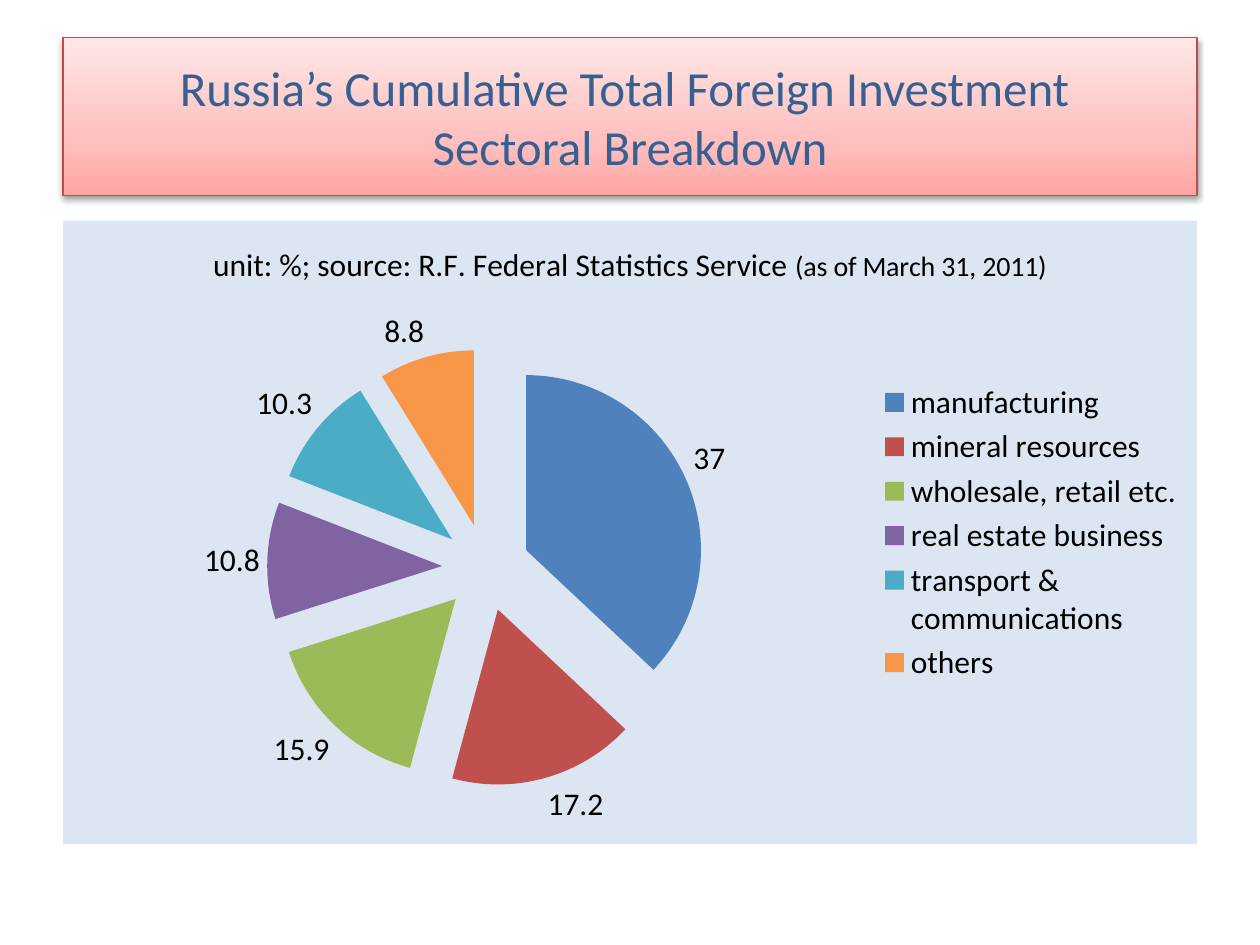
from dataclasses import dataclass

import pptx
import pptx.chart.data
import pptx.dml.color
import pptx.enum.chart
import pptx.enum.text
import pptx.oxml
import pptx.oxml.ns
import pptx.util
from pptx.util import Cm

FONT = "Calibri"
LEFT, WIDTH = Cm(1.27), Cm(22.86)


@dataclass(frozen=True)
class Sector:
    name: str
    percent: float
    color: str


SECTORS = [
    Sector("manufacturing", 37, "4F81BD"),
    Sector("mineral resources", 17.2, "C0504D"),
    Sector("wholesale, retail etc.", 15.9, "9BBB59"),
    Sector("real estate business", 10.8, "8064A2"),
    Sector("transport & communications", 10.3, "4BACC6"),
    Sector("others", 8.8, "F79646"),
]


def rgb(color: str) -> pptx.dml.color.RGBColor:
    return pptx.dml.color.RGBColor.from_string(color)


def set_font(font, size: float, color: str) -> None:
    font.name = FONT
    font.size = pptx.util.Pt(size)
    font.bold = False
    font.color.rgb = rgb(color)


def append_xml(parent, xml: str) -> None:
    namespace = pptx.oxml.ns.nsdecls("a")
    parent.append(pptx.oxml.parse_xml(xml.replace(">", f" {namespace}>", 1)))


def draw_heading(heading) -> None:
    heading.left, heading.top = LEFT, Cm(0.76)
    heading.width, heading.height = WIDTH, Cm(3.18)

    properties = heading._element.spPr
    stops = "".join(
        f'<a:gs pos="{percent * 1000}"><a:srgbClr val="{color}"/></a:gs>'
        for percent, color in [(0, "FFA6A5"), (35, "FFC0BF"), (100, "FFE7E7")]
    )
    append_xml(properties, f'<a:gradFill rotWithShape="1"><a:gsLst>{stops}</a:gsLst>'
                           '<a:lin ang="16200000" scaled="1"/></a:gradFill>')
    heading.line.color.rgb = rgb("BF4C48")
    heading.line.width = pptx.util.Pt(0.75)
    append_xml(properties, '<a:effectLst >'
                           '<a:outerShdw blurRad="40000" dist="20000" dir="5400000" rotWithShape="0">'
                           '<a:srgbClr val="000000"><a:alpha val="38000"/></a:srgbClr>'
                           '</a:outerShdw></a:effectLst>')

    frame = heading.text_frame
    frame.word_wrap = True
    frame.vertical_anchor = pptx.enum.text.MSO_ANCHOR.MIDDLE
    paragraph = frame.paragraphs[0]
    paragraph.alignment = pptx.enum.text.PP_ALIGN.CENTER
    paragraph.add_run().text = "Russia’s Cumulative Total Foreign Investment "
    paragraph.add_line_break()
    paragraph.add_run().text = "Sectoral Breakdown"
    set_font(paragraph.font, 28, "376092")


def draw_sector_pie(slide, sectors: list[Sector]) -> None:
    data = pptx.chart.data.CategoryChartData()
    data.categories = [sector.name for sector in sectors]
    data.add_series("Series 1", [sector.percent for sector in sectors])
    chart = slide.shapes.add_chart(
        pptx.enum.chart.XL_CHART_TYPE.PIE, LEFT, Cm(4.45), WIDTH, Cm(12.57), data
    ).chart
    set_font(chart.font, 18, "000000")
    fill_background(chart, "DCE6F2")

    caption = chart.chart_title.text_frame.paragraphs[0]
    for text, size in [("unit: %; source: R.F. Federal Statistics Service ", 18),
                       ("(as of March 31, 2011)", 16)]:
        run = caption.add_run()
        run.text = text
        set_font(run.font, size, "000000")

    chart.has_legend = True
    chart.legend.position = pptx.enum.chart.XL_LEGEND_POSITION.RIGHT
    chart.legend.include_in_layout = False
    set_font(chart.legend.font, 18, "000000")

    plot = chart.plots[0]
    plot.vary_by_categories = True
    series = plot.series[0]
    explode(series, 25)
    for index, sector in enumerate(sectors):
        fill = series.points[index].format.fill
        fill.solid()
        fill.fore_color.rgb = rgb(sector.color)

    labels = series.data_labels
    labels.show_value = True
    labels.position = pptx.enum.chart.XL_LABEL_POSITION.OUTSIDE_END
    set_font(labels.font, 18, "000000")


def fill_background(chart, color: str) -> None:
    chart_space = chart._chartSpace
    properties = pptx.oxml.parse_xml(
        f'<c:spPr {pptx.oxml.ns.nsdecls("c", "a")}>'
        f'<a:solidFill><a:srgbClr val="{color}"/></a:solidFill>'
        '<a:ln><a:noFill/></a:ln></c:spPr>'
    )
    chart_space.find(pptx.oxml.ns.qn("c:chart")).addnext(properties)


def explode(series, percent: int) -> None:
    """Move every slice out from the centre by a share of the radius."""
    explosion = pptx.oxml.parse_xml(
        f'<c:explosion {pptx.oxml.ns.nsdecls("c")} val="{percent}"/>'
    )
    series._element.find(pptx.oxml.ns.qn("c:tx")).addnext(explosion)


def main() -> None:
    presentation = pptx.Presentation()
    presentation.slide_width, presentation.slide_height = Cm(25.4), Cm(19.05)
    slide = presentation.slides.add_slide(presentation.slide_layouts.get_by_name("Title Only"))
    draw_heading(slide.shapes.title)
    draw_sector_pie(slide, SECTORS)
    presentation.save("out.pptx")


if __name__ == "__main__":
    main()
